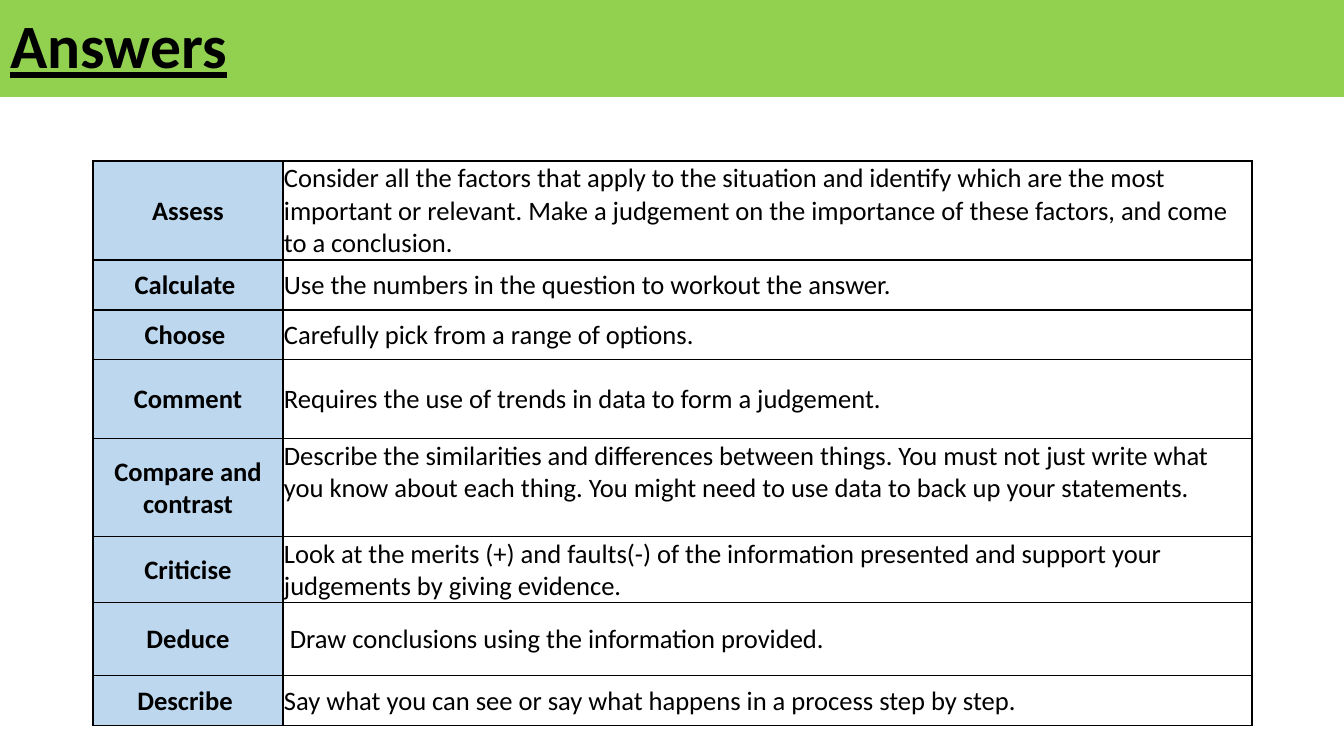
from dataclasses import dataclass

from lxml import etree
from pptx import Presentation
from pptx import util as u
from pptx.dml.color import RGBColor
from pptx.enum import text
from pptx.oxml import ns

HEADING = "Answers"
COMMANDS = [
    ("Assess", "Consider all the factors that apply to the situation and identify which are the most important or relevant. Make a judgement on the importance of these factors, and come to a conclusion.", 99),
    ("Calculate ", "Use the numbers in the question to workout the answer.", 50),
    ("Choose ", "Carefully pick from a range of options.", 50),
    ("Comment", "Requires the use of trends in data to form a judgement.", 79),
    ("Compare and contrast", "Describe the similarities and differences between things. You must not just write what you know about each thing. You might need to use data to back up your statements.", 98),
    ("Criticise", "Look at the merits (+) and faults(-) of the information presented and support your judgements by giving evidence.", 66),
    ("Deduce", " Draw conclusions using the information provided.", 73),
    ("Describe ", "Say what you can see or say what happens in a process step by step.", 50),
]
TOP_ALIGNED = {"Compare and contrast"}
SLIDE_W, SLIDE_H = 1344, 756
BANNER_H = 97
TABLE_LEFT, TABLE_TOP = 93, 161
COLUMNS = (190, 969)


@dataclass(frozen=True)
class Theme:
    font: str = "Calibri"
    ink: str = "000000"
    banner: str = "92D050"
    command: str = "BDD7EE"
    heading_pt: int = 44
    cell_pt: int = 19
    border_pt: int = 1


THEME = Theme()


def px(length):
    return u.Emu(round(length * 12192000 / SLIDE_W))


def write(paragraph, words, size, bold, align):
    paragraph.alignment = align
    run = paragraph.add_run()
    run.text = words
    run.font.name = THEME.font
    run.font.size = u.Pt(size)
    run.font.bold = bold
    run.font.color.rgb = RGBColor.from_string(THEME.ink)
    return run


def outline(cell):
    properties = cell._tc.get_or_add_tcPr()
    for side in ("a:lnL", "a:lnR", "a:lnT", "a:lnB"):
        edge = etree.SubElement(properties, ns.qn(side), w=str(u.Pt(THEME.border_pt)))
        ink = etree.SubElement(edge, ns.qn("a:solidFill"))
        etree.SubElement(ink, ns.qn("a:srgbClr"), val=THEME.ink)


def fill_cell(cell, words, is_command, anchor):
    cell.margin_left = cell.margin_right = cell.margin_top = px(1)
    cell.margin_bottom = 0
    cell.vertical_anchor = anchor
    outline(cell)
    if is_command:
        cell.fill.solid()
        cell.fill.fore_color.rgb = RGBColor.from_string(THEME.command)
    else:
        cell.fill.background()
    align = text.PP_ALIGN.CENTER if is_command else text.PP_ALIGN.LEFT
    write(cell.text_frame.paragraphs[0], words, THEME.cell_pt, is_command, align)


def add_heading(slide):
    banner = slide.shapes.title
    banner.left, banner.top, banner.width, banner.height = 0, 0, px(SLIDE_W), px(BANNER_H)
    banner.fill.solid()
    banner.fill.fore_color.rgb = RGBColor.from_string(THEME.banner)
    frame = banner.text_frame
    frame.auto_size = text.MSO_AUTO_SIZE.NONE
    frame.vertical_anchor = text.MSO_ANCHOR.MIDDLE
    line = frame.paragraphs[0]
    line.line_spacing = 0.9
    run = write(line, HEADING, THEME.heading_pt, True, text.PP_ALIGN.LEFT)
    run.font.underline = True


def add_commands(slide):
    height = sum(row_height for _, _, row_height in COMMANDS)
    glossary = slide.shapes.add_table(
        len(COMMANDS), len(COLUMNS), px(TABLE_LEFT), px(TABLE_TOP), px(sum(COLUMNS)), px(height)
    ).table
    glossary.first_row = glossary.horz_banding = False
    for column, width in zip(glossary.columns, COLUMNS):
        column.width = px(width)
    for row, (command, meaning, row_height) in zip(glossary.rows, COMMANDS):
        row.height = px(row_height)
        anchor = text.MSO_ANCHOR.TOP if command in TOP_ALIGNED else text.MSO_ANCHOR.MIDDLE
        fill_cell(row.cells[0], command, True, text.MSO_ANCHOR.MIDDLE)
        fill_cell(row.cells[1], meaning, False, anchor)


def main():
    deck = Presentation()
    deck.slide_width, deck.slide_height = px(SLIDE_W), px(SLIDE_H)
    slide = deck.slides.add_slide(deck.slide_layouts.get_by_name("Title Only"))
    add_heading(slide)
    add_commands(slide)
    deck.save("out.pptx")


if __name__ == "__main__":
    main()
